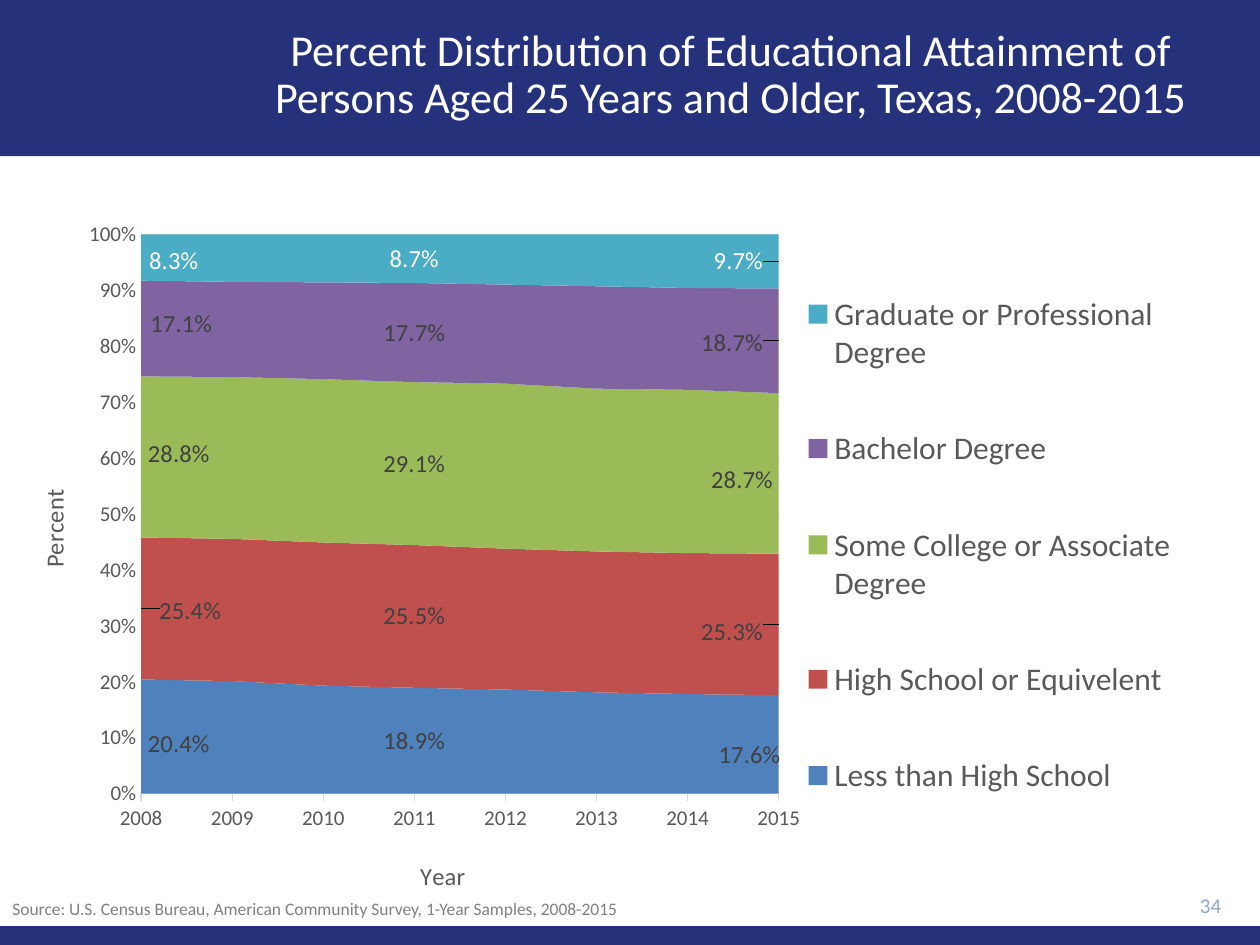
"""Build the slide on educational attainment in Texas."""
from lxml.etree import SubElement
from pptx import Presentation
from pptx.chart.data import CategoryChartData
from pptx.dml.color import RGBColor
from pptx.enum.chart import XL_CHART_TYPE, XL_LEGEND_POSITION, XL_TICK_MARK
from pptx.enum.shapes import MSO_SHAPE
from pptx.enum.text import MSO_ANCHOR, PP_ALIGN
from pptx.oxml import parse_xml
from pptx.oxml.ns import nsdecls, qn
from pptx.util import Inches, Pt

NAVY = RGBColor(0x25, 0x32, 0x7B)
WHITE = RGBColor(0xFF, 0xFF, 0xFF)
DARK = RGBColor(0x40, 0x40, 0x40)
GRAY = RGBColor(0x59, 0x59, 0x59)
PALE = RGBColor(0xD9, 0xD9, 0xD9)
MUTED = RGBColor(0x80, 0x80, 0x80)
SKY = RGBColor(0x8F, 0xA5, 0xD1)
BLUE = RGBColor(0x4F, 0x81, 0xBD)
RED = RGBColor(0xC0, 0x50, 0x4D)
GREEN = RGBColor(0x9B, 0xBB, 0x59)
PURPLE = RGBColor(0x80, 0x64, 0xA2)
TEAL = RGBColor(0x4B, 0xAC, 0xC6)
FACE = "Calibri"

TITLE = ("Percent Distribution of Educational Attainment of "
         "Persons Aged 25 Years and Older, Texas, 2008-2015")
SOURCE = ("Source: U.S. Census Bureau, American Community Survey, "
          "1-Year Samples, 2008-2015")
PAGE = "34"
BANDS = [(0, 1.24), (7.35, 0.15)]
YEARS = [str(year) for year in range(2008, 2016)]
LEVELS = [
    ("Less than High School", BLUE, DARK,
     (20.4, 20.1, 19.3, 18.9, 18.6, 18.1, 17.8, 17.6),
     {0: (0.3, 0.06), 3: (0, 0), 7: (-0.23, 0.08)}),
    ("High School or Equivelent", RED, DARK,
     (25.4, 25.4, 25.6, 25.5, 25.2, 25.2, 25.2, 25.3),
     {0: (0.39, 0.02), 3: (0, 0), 7: (-0.37, 0.06)}),
    ("Some College or Associate Degree", GREEN, DARK,
     (28.8, 28.9, 29.2, 29.1, 29.5, 29.1, 29.2, 28.7),
     {0: (0.3, -0.02), 3: (0, 0), 7: (-0.29, 0.05)}),
    ("Bachelor Degree", PURPLE, DARK,
     (17.1, 17, 17.3, 17.7, 17.7, 18.3, 18.2, 18.7),
     {0: (0.32, -0.04), 3: (0, 0), 7: (-0.37, 0.02)}),
    ("Graduate or Professional Degree", TEAL, WHITE,
     (8.3, 8.5, 8.6, 8.7, 9, 9.3, 9.6, 9.7),
     {0: (0.26, 0.03), 3: (0, 0), 7: (-0.32, 0)}),
]
WIDE, HIGH = 9.66, 5.57
PLOT = (1.12, 0.21, 5.06, 4.44)
KEY = (6.33, 0.23, 3.05, 4.89)


def style(font, size, color):
    font.name, font.size, font.bold = FACE, Pt(size), False
    font.color.rgb = color


def add_text(slide, text, box, *, size, color, align=PP_ALIGN.LEFT,
             anchor=MSO_ANCHOR.TOP, space=1.0):
    frame = slide.shapes.add_textbox(*map(Inches, box)).text_frame
    frame.word_wrap = True
    frame.vertical_anchor = anchor
    para = frame.paragraphs[0]
    para.alignment, para.line_spacing = align, space
    run = para.add_run()
    run.text = text
    style(run.font, size, color)


def make_layout(left, top, width=None, height=None, *, edge=True, inner=False):
    layout = parse_xml(f"<c:layout {nsdecls('c')}/>")
    manual = SubElement(layout, qn("c:manualLayout"))
    parts = [("layoutTarget", "inner")] if inner else []
    if edge:
        parts += [("xMode", "edge"), ("yMode", "edge")]
    parts += [("x", left / WIDE), ("y", top / HIGH)]
    if width:
        parts += [("w", width / WIDE), ("h", height / HIGH)]
    for tag, value in parts:
        SubElement(manual, qn("c:" + tag)).set("val", str(value))
    return layout


def set_layout(node, layout, after):
    for old in node.findall(qn("c:layout")):
        node.remove(old)
    if after is None:
        node.insert(0, layout)
    else:
        node.find(qn(after)).addnext(layout)


def set_axis(axis, name, spot):
    style(axis.tick_labels.font, 12, GRAY)
    frame = axis.axis_title.text_frame
    frame.text = name
    style(frame.paragraphs[0].runs[0].font, 14, GRAY)
    set_layout(axis.axis_title._element, make_layout(*spot), "c:tx")


def add_labels(series, color, shifts):
    series.data_labels.show_value = False
    for index, shift in shifts.items():
        label = series.points[index].data_label
        style(label.font, 14, color)
        node = label._get_or_add_dLbl()
        layout = make_layout(*shift, edge=False)
        set_layout(node, layout, "c:idx")
        layout.addnext(parse_xml(
            f'<c:numFmt {nsdecls("c")} formatCode="0.0%" sourceLinked="0"/>'))


def add_graph(slide):
    data = CategoryChartData(number_format="0.0%")
    data.categories = YEARS
    for name, _, _, values, _ in LEVELS:
        data.add_series(name, [round(value / 100, 3) for value in values])
    chart = slide.shapes.add_chart(
        XL_CHART_TYPE.AREA_STACKED_100, Inches(0), Inches(1.65),
        Inches(WIDE), Inches(HIGH), data).chart
    chart.has_title = False
    chart.font.name, chart.font.size = FACE, Pt(10)
    for series, (_, fill, ink, _, shifts) in zip(chart.plots[0].series, LEVELS):
        series.format.fill.solid()
        series.format.fill.fore_color.rgb = fill
        add_labels(series, ink, shifts)
    years, share = chart.category_axis, chart.value_axis
    set_axis(years, "Year", (3.3, 5.13))
    set_axis(share, "Percent", (0.26, 2.2))
    years.major_tick_mark = XL_TICK_MARK.OUTSIDE
    years.format.line.color.rgb = PALE
    years.format.line.width = Pt(0.75)
    share.major_tick_mark = XL_TICK_MARK.NONE
    share.format.line.fill.background()
    share.has_major_gridlines = True
    share.major_gridlines.format.line.color.rgb = PALE
    share.major_gridlines.format.line.width = Pt(0.75)
    share.tick_labels.number_format = "0%"
    share.tick_labels.number_format_is_linked = False
    share._element.find(qn("c:crossBetween")).set("val", "midCat")
    chart.has_legend = True
    chart.legend.position = XL_LEGEND_POSITION.RIGHT
    chart.legend.include_in_layout = False
    style(chart.legend.font, 18, GRAY)
    set_layout(chart.legend._element, make_layout(*KEY), "c:legendPos")
    area = chart._chartSpace.chart.plotArea
    set_layout(area, make_layout(*PLOT, inner=True), None)


def main():
    deck = Presentation()
    deck.slide_width, deck.slide_height = Inches(10), Inches(7.5)
    slide = deck.slides.add_slide(deck.slide_layouts[6])
    for top, height in BANDS:
        band = slide.shapes.add_shape(
            MSO_SHAPE.RECTANGLE, 0, Inches(top), Inches(10), Inches(height))
        band.shadow.inherit = False
        band.fill.solid()
        band.fill.fore_color.rgb = NAVY
        band.line.fill.background()
    add_text(slide, TITLE, (1.7, 0.1, 8.2, 1), size=25.2, color=WHITE,
             align=PP_ALIGN.CENTER, anchor=MSO_ANCHOR.MIDDLE, space=0.9)
    add_graph(slide)
    add_text(slide, PAGE, (8.9, 7.01, 0.89, 0.34), size=12, color=SKY,
             align=PP_ALIGN.RIGHT, anchor=MSO_ANCHOR.MIDDLE)
    add_text(slide, SOURCE, (0, 7.08, 7, 0.27), size=10, color=MUTED)
    deck.save("out.pptx")


if __name__ == "__main__":
    main()
